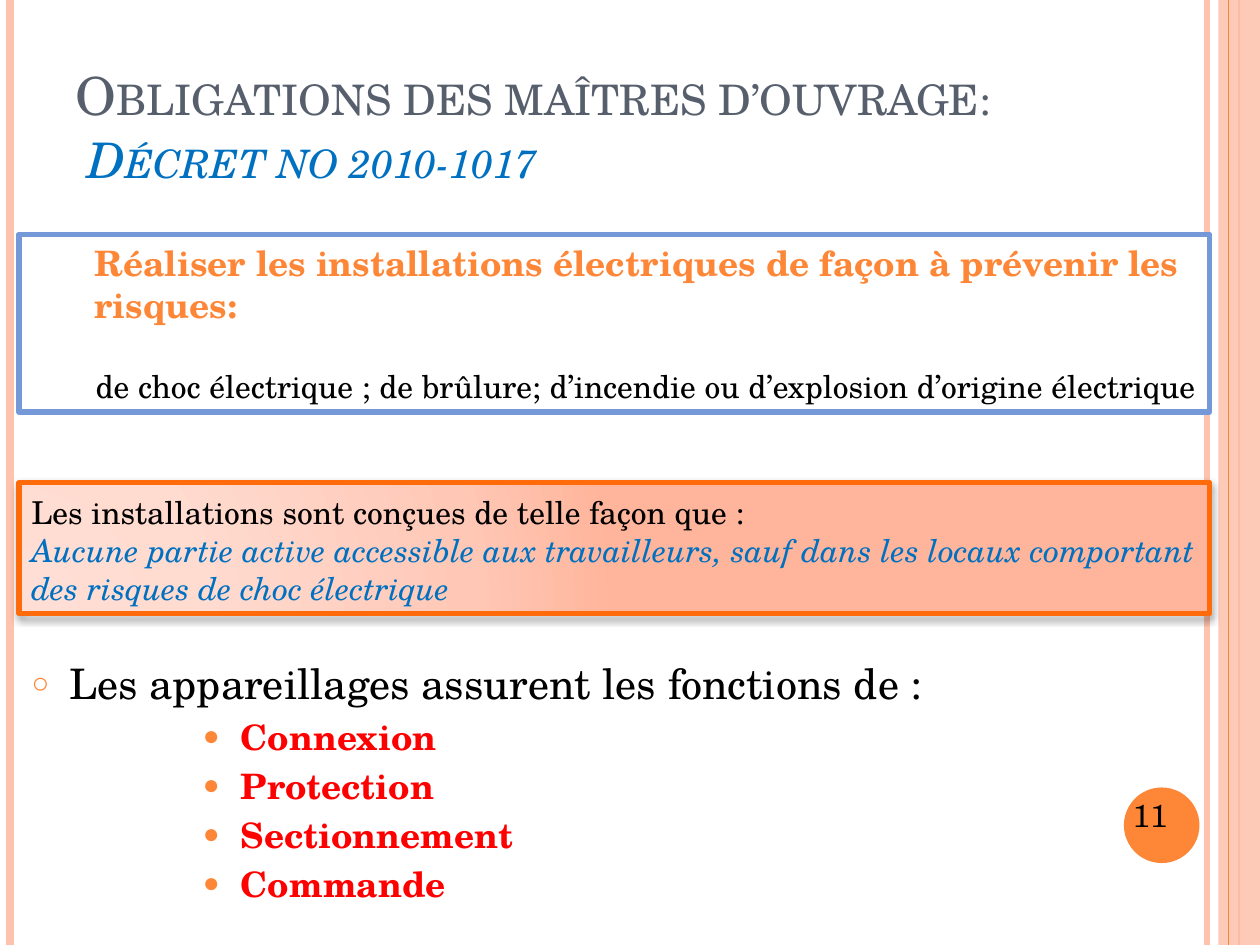
from dataclasses import dataclass

from lxml import etree
from pptx import Presentation
from pptx.dml.color import RGBColor
from pptx.enum.shapes import MSO_CONNECTOR, MSO_SHAPE
from pptx.enum.text import MSO_ANCHOR, MSO_AUTO_SIZE, PP_ALIGN
from pptx.oxml import parse_xml
from pptx.oxml.ns import nsdecls, qn
from pptx.util import Inches, Pt

STRAIGHT = MSO_CONNECTOR.STRAIGHT
RECTANGLE, OVAL = MSO_SHAPE.RECTANGLE, MSO_SHAPE.OVAL
TOP, MIDDLE, BOTTOM = MSO_ANCHOR.TOP, MSO_ANCHOR.MIDDLE, MSO_ANCHOR.BOTTOM
LEFT, CENTER = PP_ALIGN.LEFT, PP_ALIGN.CENTER
NO_AUTOFIT = MSO_AUTO_SIZE.NONE
TOP_SIDE, BOTTOM_SIDE = 0, 2
COLUMNS, ROWS = 100, 75


@dataclass(frozen=True)
class Theme:
    font: str = "TeX Gyre Schola"
    ink: str = "000000"
    paper: str = "FFFFFF"
    slate: str = "575F6D"
    blue: str = "0070C0"
    frame: str = "7598D9"
    orange: str = "FE8637"
    deep_orange: str = "FF6B0A"
    peach: str = "FEC3AE"
    red: str = "FF0000"
    glow: tuple = ((0, "FFDED5"), (30, "FFDBD0"), (75, "FFC8B6"), (100, "FFB59B"))
    title: int = 30
    subtitle: int = 28
    lead: int = 24
    strong: int = 20
    text: int = 18


class SlideBuilder:
    """Holds the theme and the current slide; places things on a 100 x 75 grid."""

    def __init__(self, presentation, theme):
        self.theme = theme
        self.column = presentation.slide_width / COLUMNS
        self.row = presentation.slide_height / ROWS
        self.slide = presentation.slides.add_slide(presentation.slide_layouts[1])

    def box(self, left, top, width, height):
        return (round(left * self.column), round(top * self.row),
                round(width * self.column), round(height * self.row))

    def style(self, font, size, color, bold=False, italic=False):
        font.name, font.size = self.theme.font, Pt(size)
        font.bold, font.italic = bold, italic
        font.color.rgb = RGBColor.from_string(color)

    def rail(self, column, color, width):
        x, bottom = round(column * self.column), round(ROWS * self.row)
        line = self.slide.shapes.add_connector(STRAIGHT, x, 0, x, bottom)
        line.line.color.rgb = RGBColor.from_string(color)
        line.line.width = Pt(width)
        etree.SubElement(line._element.spPr, qn("a:effectLst"))
        return line

    def shape(self, kind, place, fill=None, border=None, opacity=100):
        shape = self.slide.shapes.add_shape(kind, *self.box(*place))
        shape.shadow.inherit = False
        if fill:
            shape.fill.solid()
            shape.fill.fore_color.rgb = RGBColor.from_string(fill)
        if opacity < 100:
            color = shape._element.spPr.find(".//" + qn("a:srgbClr"))
            etree.SubElement(color, qn("a:alpha"), val=str(opacity * 1000))
        if border:
            shape.line.color.rgb = RGBColor.from_string(border)
            shape.line.width = Pt(3)
        else:
            shape.line.fill.background()
        return shape

    def glow(self, shape):
        """Radial gradient with a soft shadow below."""
        stops = "".join(
            f'<a:gs pos="{position * 1000}"><a:srgbClr val="{color}"/></a:gs>'
            for position, color in self.theme.glow)
        properties = shape._element.spPr
        properties.find(qn("a:prstGeom")).addnext(parse_xml(
            f'<a:gradFill {nsdecls("a")} rotWithShape="1"><a:gsLst>{stops}</a:gsLst>'
            '<a:path path="circle"><a:fillToRect l="5000" t="100000" '
            'r="120000" b="10000"/></a:path></a:gradFill>'))
        properties.find(qn("a:effectLst")).append(parse_xml(
            f'<a:outerShdw {nsdecls("a")} blurRad="{Pt(4)}" dist="{Pt(2)}" '
            'dir="5400000" rotWithShape="0"><a:srgbClr val="000000">'
            '<a:alpha val="40000"/></a:srgbClr></a:outerShdw>'))

    def frame(self, shape, anchor):
        frame = shape.text_frame
        frame.word_wrap, frame.auto_size = True, NO_AUTOFIT
        frame.vertical_anchor = anchor
        return frame

    def paragraph(self, frame, text, size, color, bold=False, italic=False,
                  align=LEFT, before=0, indent=0, hanging=0, bullet=None):
        first = frame.paragraphs[0]
        paragraph = frame.add_paragraph() if first.runs else first
        paragraph.add_run().text = text
        properties = paragraph._p.get_or_add_pPr()
        properties.set("marL", str(Inches(indent)))
        properties.set("indent", str(-Inches(hanging)))
        if bullet:
            symbol, percent = bullet
            tint = etree.SubElement(properties, qn("a:buClr"))
            etree.SubElement(tint, qn("a:srgbClr"), val=self.theme.orange)
            etree.SubElement(properties, qn("a:buSzPct"), val=str(percent * 1000))
            etree.SubElement(properties, qn("a:buChar"), char=symbol)
        paragraph.alignment, paragraph.space_before = align, Pt(before)
        self.style(paragraph.font, size, color, bold, italic)
        return paragraph

    def title(self, place, heading, subheading):
        shape = self.slide.shapes.title
        shape.left, shape.top, shape.width, shape.height = self.box(*place)
        paragraph = self.frame(shape, BOTTOM).paragraphs[0]
        paragraph.alignment = LEFT
        theme = self.theme

        def add(text, size, color, italic=False):
            run = paragraph.add_run()
            run.text = text
            self.style(run.font, size, color, italic=italic)
            run.font._element.set("cap", "small")

        add(heading, theme.title, theme.slate)
        paragraph.add_line_break()
        add(" ", theme.title, theme.slate)
        add(subheading, theme.subtitle, theme.blue, italic=True)

    def body(self, place, lead, items):
        shape = self.slide.placeholders[1]
        shape.left, shape.top, shape.width, shape.height = self.box(*place)
        frame, theme = self.frame(shape, TOP), self.theme
        self.paragraph(frame, lead, theme.lead, theme.ink,
                       indent=0.3, hanging=0.3, bullet=("○", 70))
        for item in items:
            paragraph = self.paragraph(frame, item, theme.strong, theme.red, bold=True,
                                       before=4, indent=1.66, hanging=0.3, bullet=("●", 80))
            paragraph.level = 1

    def label(self, place, text):
        shape = self.slide.shapes.add_textbox(*self.box(*place))
        self.paragraph(self.frame(shape, TOP), text, self.theme.text, self.theme.ink)


def main():
    presentation = Presentation()
    presentation.slide_width, presentation.slide_height = Inches(10), Inches(7.5)
    theme = Theme()
    builder = SlideBuilder(presentation, theme)

    # Side rails and page number disc
    builder.rail(95.8, theme.peach, 3)
    builder.rail(0.8, theme.peach, 4.5)
    band_line = builder.rail(98.35, theme.orange, 1.5)
    band = builder.shape(RECTANGLE, (96.7, 0, 3.3, ROWS), theme.peach, opacity=87)
    band_line.begin_connect(band, TOP_SIDE)
    band_line.end_connect(band, BOTTOM_SIDE)
    builder.rail(97.5, theme.orange, 0.75)
    builder.shape(OVAL, (89.2, 62.5, 6, 6), theme.orange)

    # Title and list
    builder.title((5, 3, 81.7, 12.5), "Obligations des maîtres d’ouvrage:",
                  "Décret no 2010-1017")
    builder.body((1.5, 51.7, 96.1, 22), "Les appareillages assurent les fonctions de :",
                 ("Connexion", "Protection", "Sectionnement", "Commande"))

    # Risks to prevent
    risks = builder.shape(RECTANGLE, (1.5, 18.6, 94.5, 14.1), theme.paper, theme.frame)
    frame = builder.frame(risks, MIDDLE)
    builder.paragraph(frame, "Réaliser les installations électriques de façon à prévenir "
                      "les risques:", theme.strong, theme.orange, bold=True, indent=0.5)
    builder.paragraph(frame, "de choc électrique ; de brûlure; d’incendie ou d’explosion "
                      "d’origine électrique", theme.text, theme.ink,
                      align=CENTER, before=24, indent=0.5)

    # Design rule
    rule = builder.shape(RECTANGLE, (1.5, 38.3, 94.5, 10.4), border=theme.deep_orange)
    builder.glow(rule)
    frame = builder.frame(rule, MIDDLE)
    opening = builder.paragraph(frame, "Les installations sont conçues de telle façon que :",
                                theme.text, theme.ink)
    opening.line_spacing = 1.1
    builder.paragraph(frame, "Aucune partie active accessible aux travailleurs, sauf dans les "
                      "locaux comportant des risques de choc électrique",
                      theme.text, theme.blue, italic=True)

    # Page number
    builder.label((88.9, 62.7, 6.7, 5.7), "11")
    presentation.save("out.pptx")


if __name__ == "__main__":
    main()
